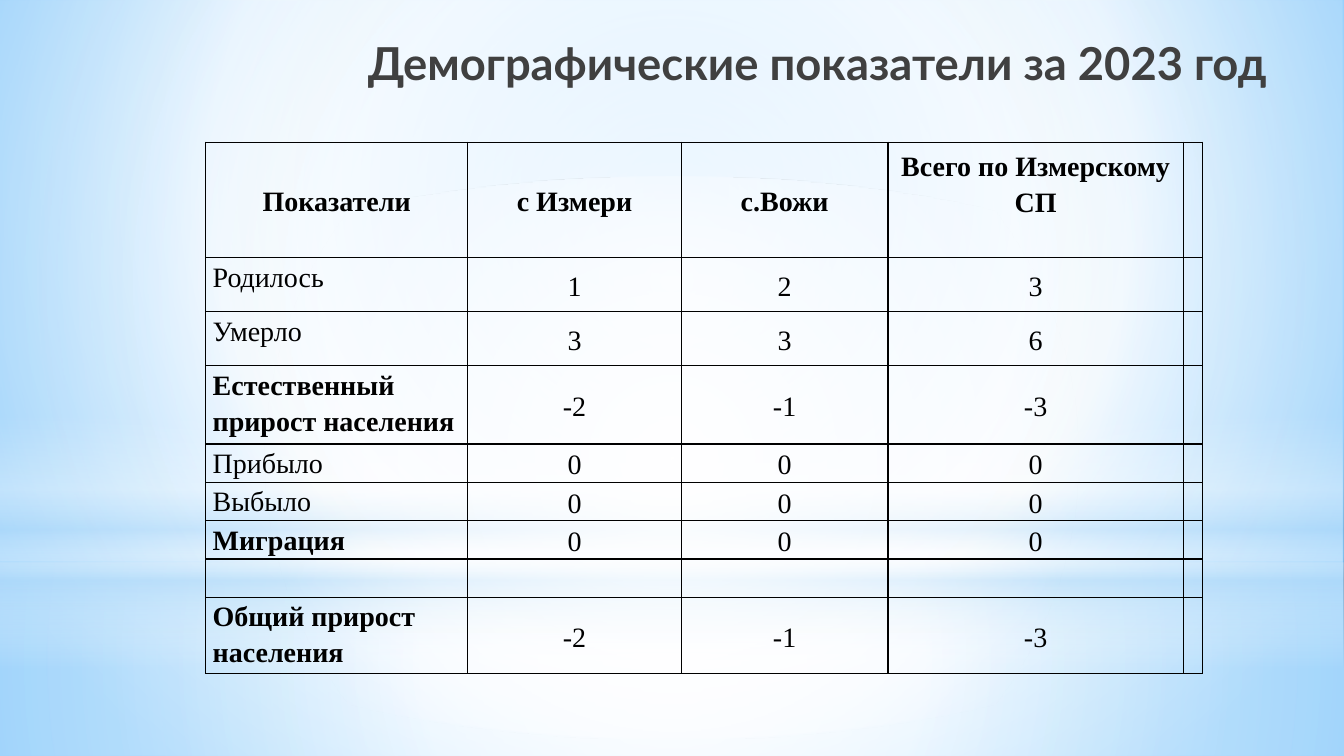
from dataclasses import dataclass

from pptx import Presentation
from pptx.dml.color import RGBColor
from pptx.enum.shapes import MSO_SHAPE
from pptx.enum.text import MSO_ANCHOR, MSO_AUTO_SIZE, PP_ALIGN
from pptx.oxml import parse_xml
from pptx.oxml.ns import nsdecls, qn
from pptx.util import Pt


@dataclass(frozen=True)
class Theme:
    ink: str = "000000"
    white: str = "FFFFFF"
    haze: str = "B4DCFA"
    sky: str = "9ED5FF"
    deep_sky: str = "5BB9FF"
    charcoal: str = "404040"
    navy: str = "212745"
    title_font: str = "Lato"
    table_font: str = "Times New Roman"
    title_size: float = 32.4
    table_size: float = 20
    border: float = 1


THEME = Theme()


def set_gradient(fill, owner, stops, focus=None):
    """Stops are (position, colour, opacity) in percent; without focus it runs downwards."""
    fill.gradient()
    stop_xml = "".join(
        f'<a:gs pos="{pos * 1000}"><a:srgbClr val="{colour}">'
        f'<a:alpha val="{opacity * 1000}"/></a:srgbClr></a:gs>'
        for pos, colour, opacity in stops)
    if focus:
        sides = " ".join(f'{side}="{value * 1000}"' for side, value in zip("ltrb", focus))
        direction = f'<a:path path="circle"><a:fillToRect {sides}/></a:path>'
    else:
        direction = '<a:lin ang="5400000" scaled="0"/>'
    gradient = parse_xml(f'<a:gradFill {nsdecls("a")} rotWithShape="1">'
                         f'<a:gsLst>{stop_xml}</a:gsLst>{direction}</a:gradFill>')
    default = owner.find(".//" + qn("a:gradFill"))
    default.getparent().replace(default, gradient)


def write(frame, text, *, font, size, bold=False, colour=None, gradient=None,
          align=PP_ALIGN.LEFT, spacing=None):
    paragraph = frame.paragraphs[0]
    paragraph.alignment = align
    paragraph.line_spacing = spacing
    run = paragraph.add_run()
    run.text = text
    run.font.name, run.font.size, run.font.bold = font, Pt(size), bold
    if gradient:
        set_gradient(run.font.fill, paragraph._p, gradient)
    else:
        run.font.color.rgb = RGBColor.from_string(colour)


class SlideBuilder:
    def __init__(self, slide, theme):
        self.slide, self.theme = slide, theme

    def background(self, stops, focus):
        set_gradient(self.slide.background.fill, self.slide.element, stops, focus)

    def glow(self, kind, top, height, stops, focus=None):
        glow = self.slide.shapes.add_shape(kind, 0, Pt(top), Pt(960), Pt(height))
        glow.shadow.inherit = False
        glow.line.fill.background()
        set_gradient(glow.fill, glow.element, stops, focus)

    def title(self, text, left, top, width, height, gradient):
        title = self.slide.shapes.title
        title.element.getparent().append(title.element)  # bring in front of the glows
        title.left, title.top, title.width, title.height = map(Pt, (left, top, width, height))
        frame = title.text_frame
        frame.word_wrap = True
        frame.auto_size = MSO_AUTO_SIZE.NONE
        frame.vertical_anchor = MSO_ANCHOR.TOP
        write(frame, text, font=self.theme.title_font, size=self.theme.title_size,
              bold=True, gradient=gradient, align=PP_ALIGN.RIGHT)

    def table(self, left, top, widths, heights, rows, bold_labels):
        table = self.slide.shapes.add_table(
            len(heights), len(widths), Pt(left), Pt(top),
            Pt(sum(widths)), Pt(sum(heights))).table
        table.first_row = table.horz_banding = False
        for column, width in zip(table.columns, widths):
            column.width = Pt(width)
        for r, (height, values) in enumerate(zip(heights, rows)):
            table.rows[r].height = Pt(height)
            for c in range(len(widths)):
                cell = table.cell(r, c)
                self.style_cell(cell)
                if c >= len(values):
                    continue
                is_label = r > 0 and c == 0
                cell.vertical_anchor = MSO_ANCHOR.TOP if is_label else MSO_ANCHOR.MIDDLE
                write(cell.text_frame, values[c], font=self.theme.table_font,
                      size=self.theme.table_size, colour=self.theme.ink,
                      bold=r == 0 or values[c] in bold_labels,
                      align=PP_ALIGN.LEFT if is_label else PP_ALIGN.CENTER, spacing=1.15)
        return table

    def style_cell(self, cell):
        cell.margin_left = cell.margin_right = Pt(5)
        cell.margin_top = cell.margin_bottom = 0
        cell.fill.background()
        properties = cell._tc.get_or_add_tcPr()
        for i, side in enumerate("LRTB"):
            properties.insert(i, parse_xml(
                f'<a:ln{side} {nsdecls("a")} w="{Pt(self.theme.border)}"><a:solidFill>'
                f'<a:srgbClr val="{self.theme.ink}"/></a:solidFill></a:ln{side}>'))


def main():
    presentation = Presentation()
    presentation.slide_width, presentation.slide_height = Pt(960), Pt(540)
    builder = SlideBuilder(presentation.slides.add_slide(presentation.slide_layouts[5]), THEME)
    white, haze = THEME.white, THEME.haze
    centre = (50, 50, 50, 50)

    # Sky backdrop
    builder.background([(0, THEME.sky, 100), (60, white, 100), (100, THEME.deep_sky, 100)],
                       (20, 10, 20, 60))
    builder.glow(MSO_SHAPE.RECTANGLE, 402, 138,
                 [(0, white, 91), (37, white, 76), (100, haze, 79)], centre)
    builder.glow(MSO_SHAPE.RECTANGLE, 0, 402,
                 [(0, white, 89), (48, white, 62), (100, haze, 79)], centre)
    builder.glow(MSO_SHAPE.RECTANGLE, 296.6, 180,
                 [(0, white, 0), (29, white, 30), (45, haze, 40),
                  (55, white, 26), (65, haze, 60), (100, white, 0)])
    builder.glow(MSO_SHAPE.OVAL, 126, 402, [(0, white, 100), (56, white, 0)], centre)

    # Title
    builder.title("Демографические показатели за 2023 год", 156.2, 21.6, 756, 61.2,
                  [(0, THEME.ink, 100), (40, THEME.charcoal, 100), (100, THEME.navy, 65)])

    # Population table
    indicators = [
        ("Показатели", "с Измери", "с.Вожи", "Всего по Измерскому СП"),
        ("Родилось", "1", "2", "3"),
        ("Умерло", "3", "3", "6"),
        ("Естественный прирост населения", "-2", "-1", "-3"),
        ("Прибыло", "0", "0", "0"),
        ("Выбыло", "0", "0", "0"),
        ("Миграция", "0", "0", "0"),
        (),
        ("Общий прирост населения", "-2", "-1", "-3"),
    ]
    population = builder.table(
        146.9, 101.5, [187.2, 152.6, 147.6, 211, 13.7],
        [82.3, 38.7, 38.7, 55.9] + [27.4] * 4 + [54.6], indicators,
        {"Естественный прирост населения", "Миграция", "Общий прирост населения"})
    total_header = population.cell(0, 3)
    total_header.vertical_anchor = MSO_ANCHOR.TOP
    total_header.margin_top = Pt(3.5)

    presentation.save("out.pptx")


if __name__ == "__main__":
    main()
